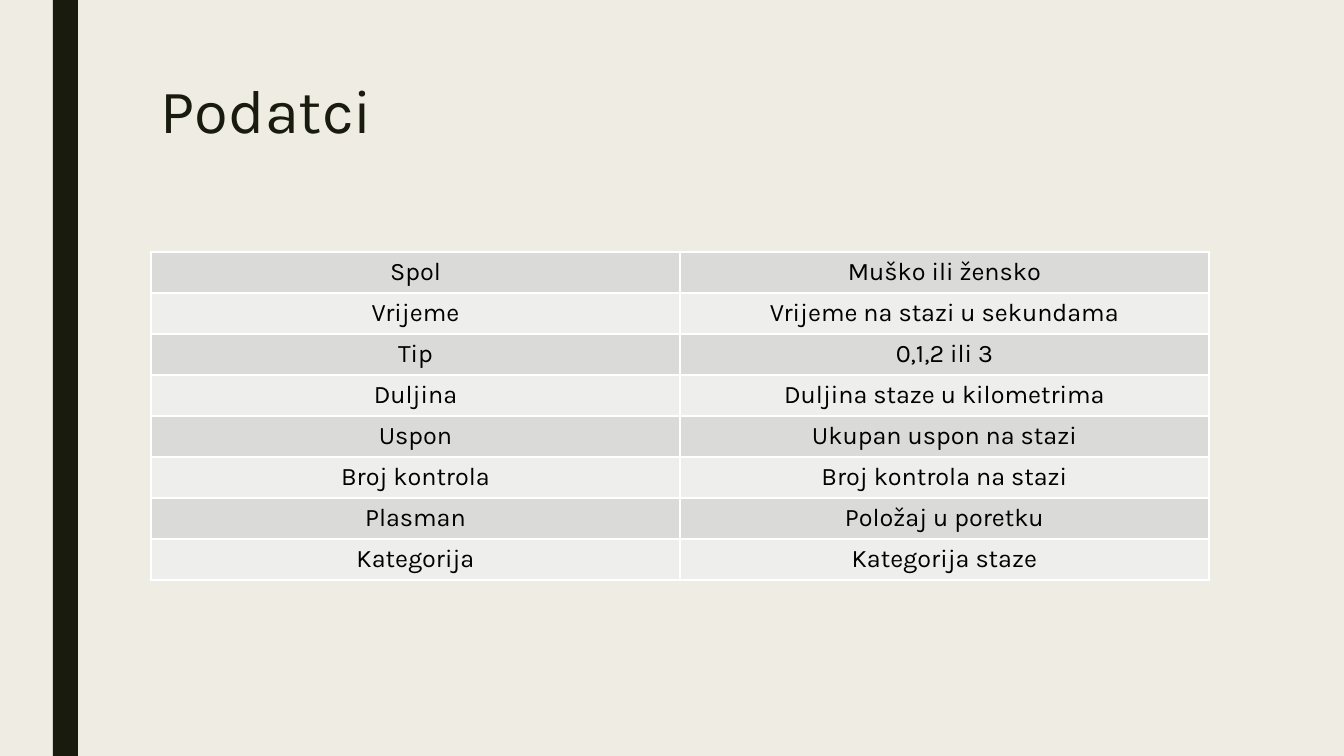
from dataclasses import dataclass

from lxml.etree import SubElement
from pptx import Presentation
from pptx.dml.color import RGBColor
from pptx.enum.shapes import MSO_SHAPE
from pptx.enum.text import MSO_ANCHOR, PP_ALIGN
from pptx.oxml.ns import qn
from pptx.util import Emu, Pt

# Content
TITLE = "Podatci"
ROWS = [
    ("Spol", "Muško ili žensko"),
    ("Vrijeme", "Vrijeme na stazi u sekundama"),
    ("Tip", "0,1,2 ili 3"),
    ("Duljina", "Duljina staze u kilometrima"),
    ("Uspon", "Ukupan uspon na stazi"),
    ("Broj kontrola", "Broj kontrola na stazi"),
    ("Plasman", "Položaj u poretku"),
    ("Kategorija", "Kategorija staze"),
]

# Layout in px: left, top, width, height
PAGE_WIDTH, PAGE_HEIGHT = 1344, 756
STRIPE = (53, 0, 25, PAGE_HEIGHT)
TITLE_BOX = (151, 76, 1058, 163)
TABLE_LEFT, TABLE_TOP = 151, 252
COLUMN_WIDTH, ROW_HEIGHT = 529, 41


@dataclass(frozen=True)
class Theme:
    font: str = "Karla"
    background: str = "EFEDE3"
    dark: str = "191B0E"
    cell_text: str = "000000"
    bands: tuple = ("DADBD9", "EEEEED")
    border: str = "FFFFFF"
    title_size: int = 44
    cell_size: int = 18
    border_width: int = 1


THEME = Theme()


def px(length):
    return Emu(round(length * 914400 / 100.8))


def paint(fill, color):
    fill.solid()
    fill.fore_color.rgb = RGBColor.from_string(color)


def add_span(para, text, size, color):
    span = para.add_run()
    span.text = text
    span.font.name = THEME.font
    span.font.size = Pt(size)
    span.font.color.rgb = RGBColor.from_string(color)


def add_borders(cell):
    properties = cell._tc.get_or_add_tcPr()
    for position, side in enumerate(("lnL", "lnR", "lnT", "lnB")):
        line = properties.makeelement(qn(f"a:{side}"), {"w": str(Pt(THEME.border_width))})
        solid = SubElement(line, qn("a:solidFill"))
        SubElement(solid, qn("a:srgbClr"), val=THEME.border)
        properties.insert(position, line)


def add_stripe(page):
    stripe = page.shapes.add_shape(MSO_SHAPE.RECTANGLE, *map(px, STRIPE))
    stripe.shadow.inherit = False
    paint(stripe.fill, THEME.dark)
    stripe.line.fill.background()


def add_title(page):
    box = page.shapes.add_textbox(*map(px, TITLE_BOX))
    frame = box.text_frame
    frame.word_wrap = True
    frame.vertical_anchor = MSO_ANCHOR.TOP
    para = frame.paragraphs[0]
    para.line_spacing = 0.89
    add_span(para, TITLE, THEME.title_size, THEME.dark)


def add_data_table(page):
    row_count, column_count = len(ROWS), len(ROWS[0])
    area = (TABLE_LEFT, TABLE_TOP, COLUMN_WIDTH * column_count, ROW_HEIGHT * row_count)
    table = page.shapes.add_table(row_count, column_count, *map(px, area)).table
    table.first_row = False
    table.horz_banding = False
    for row_index, texts in enumerate(ROWS):
        table.rows[row_index].height = px(ROW_HEIGHT)
        for column_index, text in enumerate(texts):
            cell = table.cell(row_index, column_index)
            paint(cell.fill, THEME.bands[row_index % len(THEME.bands)])
            add_borders(cell)
            para = cell.text_frame.paragraphs[0]
            para.alignment = PP_ALIGN.CENTER
            add_span(para, text, THEME.cell_size, THEME.cell_text)


def main():
    deck = Presentation()
    deck.slide_width, deck.slide_height = px(PAGE_WIDTH), px(PAGE_HEIGHT)
    page = deck.slides.add_slide(deck.slide_layouts[6])
    paint(page.background.fill, THEME.background)
    add_stripe(page)
    add_title(page)
    add_data_table(page)
    deck.save("out.pptx")


if __name__ == "__main__":
    main()
